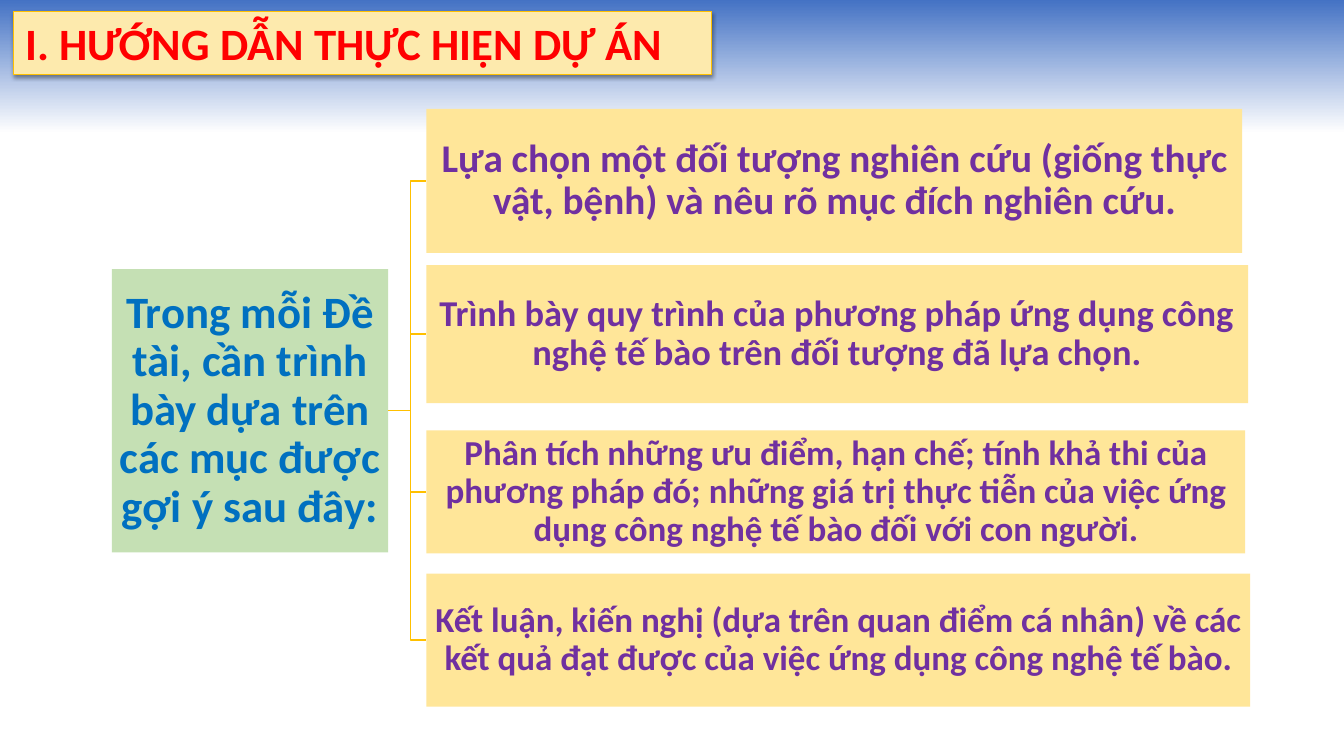
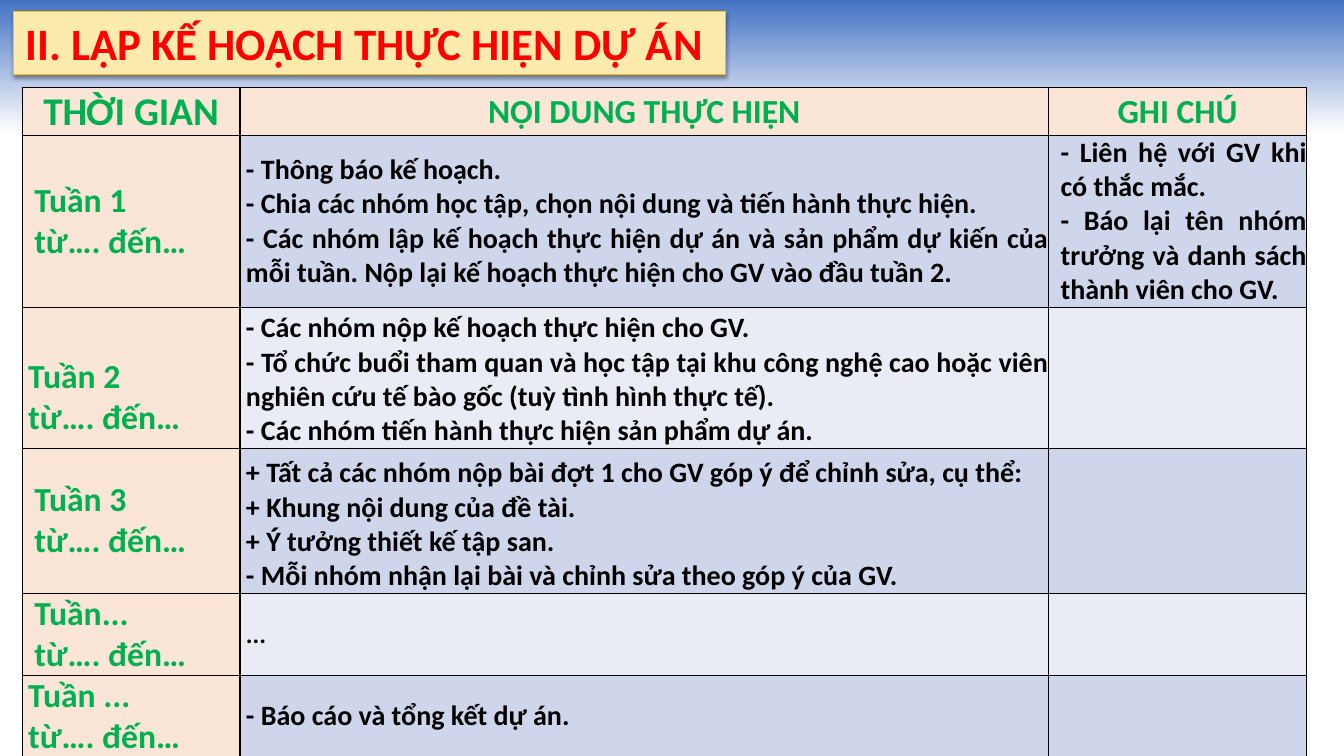
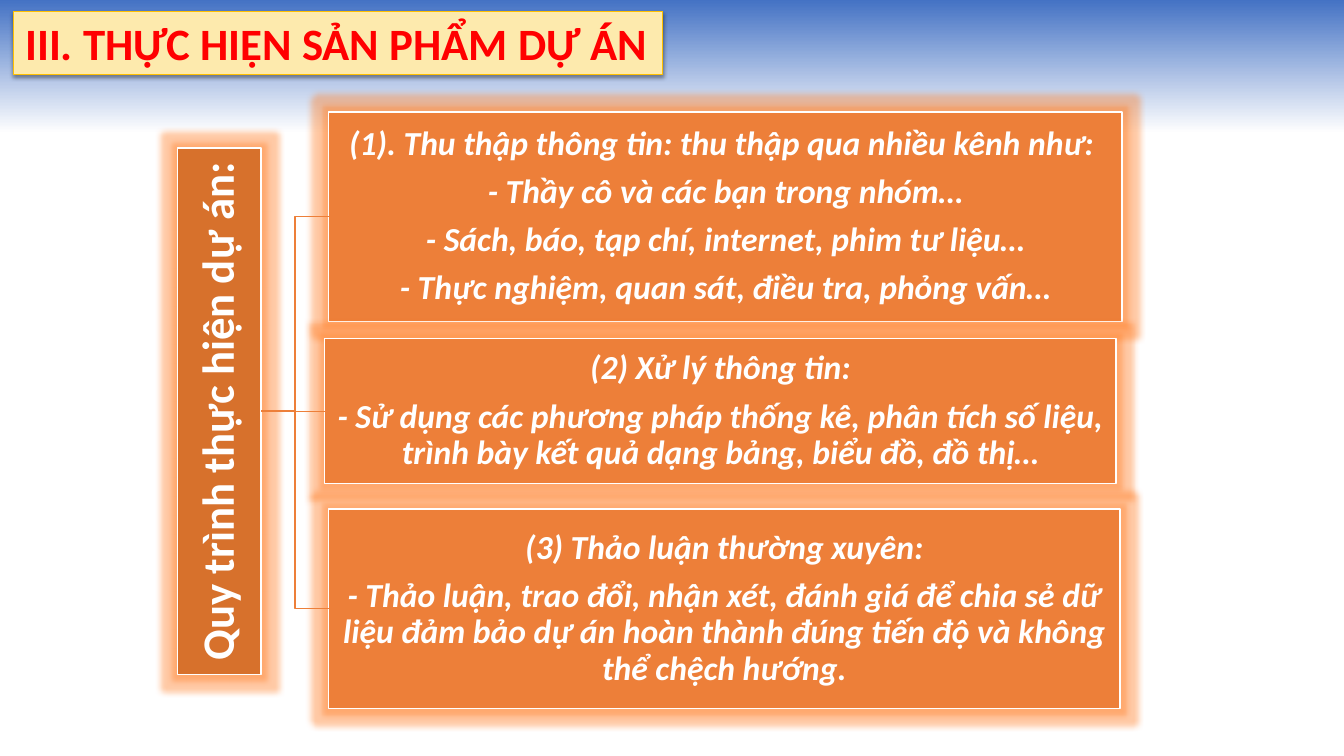
import dataclasses

import lxml.etree
import pptx
import pptx.dml.color
import pptx.enum.dml
import pptx.enum.shapes
import pptx.enum.text
import pptx.oxml.ns
import pptx.util

Inches = pptx.util.Inches
Pt = pptx.util.Pt
RGB = pptx.dml.color.RGBColor.from_string
qn = pptx.oxml.ns.qn
ALIGN = pptx.enum.text.PP_ALIGN
ANCHOR = pptx.enum.text.MSO_ANCHOR
CONNECTOR = pptx.enum.shapes.MSO_CONNECTOR
RECTANGLE = pptx.enum.shapes.MSO_SHAPE.RECTANGLE


@dataclasses.dataclass(frozen=True)
class Theme:
    font: str = "Calibri"
    band: str = "4472C4"
    white: str = "FFFFFF"
    black: str = "000000"
    title_fill: str = "FDEAAD"
    title_text: str = "FF0000"
    gold: str = "FFC000"
    topic_fill: str = "C5E0B4"
    topic_text: str = "0070C0"
    item_fill: str = "FFE699"
    item_text: str = "7030A0"
    label_fill: str = "FBE5D6"
    label_text: str = "00B050"
    stripes: tuple = ("CFD5EA", "E9EBF5")
    process_fill: str = "D7712C"
    step_fill: str = "ED7F39"
    glow: str = "FF7A1F"
    title_size: int = 32
    header_size: int = 28
    label_size: int = 24
    body_size: int = 20
    dots_size: int = 18


def write(frame, text, *, size, color, font=Theme.font, italic=False,
          align=ALIGN.CENTER, spacing=1.0, after=0):
    frame.word_wrap = True
    for index, line in enumerate(text.split("\n")):
        para = frame.add_paragraph() if index else frame.paragraphs[0]
        para.alignment = align
        para.line_spacing = spacing
        para.space_after = Pt(after)
        span = para.add_run()
        span.text = line
        span.font.name = font
        span.font.size = Pt(size)
        span.font.bold = True
        span.font.italic = italic
        span.font.color.rgb = RGB(color)


def add_effect(shape, kind, color, alpha, **attributes):
    effects = lxml.etree.SubElement(shape.element.spPr, qn("a:effectLst"))
    effect = lxml.etree.SubElement(effects, qn("a:" + kind), attributes)
    tint = lxml.etree.SubElement(effect, qn("a:srgbClr"), val=color)
    lxml.etree.SubElement(tint, qn("a:alpha"), val=str(alpha * 1000))


def add_borders(cell, color):
    properties = cell._tc.get_or_add_tcPr()
    for position, side in enumerate(("lnL", "lnR", "lnT", "lnB")):
        line = lxml.etree.Element(qn("a:" + side), w=str(Pt(1)))
        fill = lxml.etree.SubElement(line, qn("a:solidFill"))
        lxml.etree.SubElement(fill, qn("a:srgbClr"), val=color)
        properties.insert(position, line)


class Builder:
    def __init__(self, theme):
        self.theme = theme
        self.deck = pptx.Presentation()
        self.deck.slide_width = Inches(13.33)
        self.deck.slide_height = Inches(7.5)
        self.page = None

    def start(self, title, title_width):
        theme = self.theme
        self.page = self.deck.slides.add_slide(self.deck.slide_layouts[6])
        band = self.rectangle((0, 0, 13.33, 1.32), theme.band)
        band.fill.gradient()
        band.fill.gradient_angle = 270
        for stop, color in zip(band.fill.gradient_stops, (theme.band, theme.white)):
            stop.color.rgb = RGB(color)
        box = self.rectangle((0.13, 0.11, title_width, 0.63), theme.title_fill,
                             line=theme.gold, line_width=0.75)
        box.element.spPr.remove(box.element.spPr.find(qn("a:effectLst")))
        add_effect(box, "outerShdw", theme.black, 38, blurRad=str(Pt(3.1)),
                   dist=str(Pt(1.6)), dir="5400000", rotWithShape="0")
        self.margins(box.text_frame, 0)
        box.text_frame.margin_left = Inches(0.12)
        box.text_frame.vertical_anchor = ANCHOR.TOP
        write(box.text_frame, title, size=theme.title_size, color=theme.title_text,
              align=ALIGN.LEFT, spacing=1.09, after=3)

    def margins(self, holder, inset):
        holder.margin_left = holder.margin_right = Inches(inset)
        holder.margin_top = holder.margin_bottom = Inches(inset)

    def rectangle(self, place, fill, line=None, line_width=1):
        box = self.page.shapes.add_shape(RECTANGLE, *map(Inches, place))
        box.shadow.inherit = False
        box.fill.solid()
        box.fill.fore_color.rgb = RGB(fill)
        if line:
            box.line.color.rgb = RGB(line)
            box.line.width = Pt(line_width)
        else:
            box.line.fill.background()
        return box

    def node(self, place, text, fill, color, size, *, italic=False, line=None,
             glow=None, upward=False):
        box = self.rectangle(place, fill, line)
        if glow:
            box.element.spPr.remove(box.element.spPr.find(qn("a:effectLst")))
            add_effect(box, "glow", glow, 40, rad=str(Pt(8)))
        if upward:
            box.element.find(".//" + qn("a:bodyPr")).set("vert", "vert270")
        self.margins(box.text_frame, 0.02)
        box.text_frame.vertical_anchor = ANCHOR.MIDDLE
        write(box.text_frame, text, size=size, color=color, italic=italic,
              spacing=0.9, after=round(size * 0.35, 1))
        return box

    def branch(self, parent, child, color, bend=50):
        level = abs(parent.top + parent.height / 2
                    - child.top - child.height / 2) < Inches(0.01)
        kind = CONNECTOR.STRAIGHT if level else CONNECTOR.ELBOW
        link = self.page.shapes.add_connector(kind, 0, 0, 0, 0)
        link.begin_connect(parent, 3)
        link.end_connect(child, 1)
        link.line.color.rgb = RGB(color)
        link.line.width = Pt(1)
        lxml.etree.SubElement(link.element.spPr, qn("a:effectLst"))
        if not level:
            guides = link.element.find(".//" + qn("a:avLst"))
            if guides is None:
                guides = lxml.etree.SubElement(
                    link.element.find(".//" + qn("a:prstGeom")), qn("a:avLst"))
            lxml.etree.SubElement(guides, qn("a:gd"), name="adj1",
                                  fmla=f"val {bend * 1000}")

    def table(self, place, columns, heights):
        frame = self.page.shapes.add_table(len(heights), len(columns),
                                           *map(Inches, place))
        grid = frame.table
        grid.horz_banding = False
        for column, width in zip(grid.columns, columns):
            column.width = Inches(width)
        for row, height in zip(grid.rows, heights):
            row.height = Inches(height)
        return grid

    def cell(self, cell, text, fill, *, indent=0, top=0, anchor=ANCHOR.MIDDLE, **style):
        cell.fill.solid()
        cell.fill.fore_color.rgb = RGB(fill)
        add_borders(cell, self.theme.black)
        self.margins(cell, 0)
        cell.margin_left = Inches(indent)
        cell.margin_top = Inches(top)
        cell.vertical_anchor = anchor
        if text:
            write(cell.text_frame, text, **style)


def build_guide(builder):
    theme = builder.theme
    builder.start("I. HƯỚNG DẪN THỰC HIỆN DỰ ÁN", 6.93)
    topic = builder.node(
        (1.11, 2.67, 2.74, 2.81),
        "Trong mỗi Đề tài, cần trình bày dựa trên các mục được gợi ý sau đây:",
        theme.topic_fill, theme.topic_text, 32)
    items = (
        (1.08, 8.09, 1.43, 28, "Lựa chọn một đối tượng nghiên cứu (giống thực vật, bệnh) "
         "và nêu rõ mục đích nghiên cứu."),
        (2.63, 8.15, 1.37, 26, "Trình bày quy trình của phương pháp ứng dụng công nghệ "
         "tế bào trên đối tượng đã lựa chọn."),
        (4.27, 8.12, 1.22, 25, "Phân tích những ưu điểm, hạn chế; tính khả thi của phương "
         "pháp đó; những giá trị thực tiễn của việc ứng dụng công nghệ tế bào đối với "
         "con người."),
        (5.69, 8.17, 1.32, 25, "Kết luận, kiến nghị (dựa trên quan điểm cá nhân) về các "
         "kết quả đạt được của việc ứng dụng công nghệ tế bào."),
    )
    for top, width, height, size, text in items:
        item = builder.node((4.23, top, width, height), text,
                            theme.item_fill, theme.item_text, size)
        builder.branch(topic, item, theme.gold, bend=58)


def build_plan(builder):
    theme = builder.theme
    builder.start("II. LẬP KẾ HOẠCH THỰC HIỆN DỰ ÁN", 7.07)
    heights = (0.35, 1.53, 1.4, 1.44, 0.76, 0.76)
    grid = builder.table((0.22, 0.87, 12.74, sum(heights)), (2.16, 8.02, 2.56), heights)
    headers = (("THỜI GIAN", theme.header_size),
               ("NỘI DUNG THỰC HIỆN", theme.label_size),
               ("GHI CHÚ", theme.label_size))
    for column, (text, size) in enumerate(headers):
        builder.cell(grid.cell(0, column), text, theme.label_fill,
                     size=size, color=theme.label_text)
    weeks = (
        ("Tuần 1 ", 0.12, 0, ANCHOR.MIDDLE, theme.body_size,
         "- Thông báo kế hoạch.\n"
         "- Chia các nhóm học tập, chọn nội dung và tiến hành thực hiện.\n"
         "- Các nhóm lập kế hoạch thực hiện dự án và sản phẩm dự kiến của mỗi tuần. "
         "Nộp lại kế hoạch thực hiện cho GV vào đầu tuần 2.",
         "- Liên hệ với GV khi có thắc mắc.\n"
         "- Báo lại tên nhóm trưởng và danh sách thành viên cho GV."),
        ("Tuần 2 ", 0.06, 0.4, ANCHOR.BOTTOM, theme.body_size,
         "- Các nhóm nộp kế hoạch thực hiện cho GV.\n"
         "- Tổ chức buổi tham quan và học tập tại khu công nghệ cao hoặc viên nghiên cứu "
         "tế bào gốc (tuỳ tình hình thực tế).\n"
         "- Các nhóm tiến hành thực hiện sản phẩm dự án.", ""),
        ("Tuần 3", 0.12, 0, ANCHOR.BOTTOM, theme.body_size,
         "+ Tất cả các nhóm nộp bài đợt 1 cho GV góp ý để chỉnh sửa, cụ thể:\n"
         "+ Khung nội dung của đề tài.\n"
         "+ Ý tưởng thiết kế tập san.\n"
         "- Mỗi nhóm nhận lại bài và chỉnh sửa theo góp ý của GV.", ""),
        ("Tuần... ", 0.12, 0, ANCHOR.MIDDLE, theme.dots_size, "...", ""),
        ("Tuần ... ", 0.06, 0, ANCHOR.MIDDLE, theme.body_size,
         "- Báo cáo và tổng kết dự án.", ""),
    )
    for row, (week, indent, top, anchor, size, content, note) in enumerate(weeks, 1):
        stripe = theme.stripes[(row - 1) % 2]
        builder.cell(grid.cell(row, 0), week + "\ntừ…. đến…", theme.label_fill,
                     indent=indent, top=top, size=theme.label_size,
                     color=theme.label_text, align=ALIGN.JUSTIFY)
        builder.cell(grid.cell(row, 1), content, stripe, indent=0.06, anchor=anchor,
                     size=size, color=theme.black, align=ALIGN.JUSTIFY)
        builder.cell(grid.cell(row, 2), note, stripe, indent=0.12,
                     size=theme.body_size, color=theme.black, align=ALIGN.JUSTIFY)


def build_process(builder):
    theme = builder.theme
    builder.start("III. THỰC HIỆN SẢN PHẨM DỰ ÁN", 6.44)
    process = builder.node((1.76, 1.47, 0.83, 5.22), "Quy trình thực hiện dự án:",
                           theme.process_fill, theme.white, 32, line=theme.white,
                           glow=theme.glow, upward=True)
    steps = (
        ((3.26, 1.11, 7.87, 2.08),
         "(1). Thu thập thông tin: thu thập qua nhiều kênh như: \n"
         "- Thầy cô và các bạn trong nhóm…\n"
         "- Sách, báo, tạp chí, internet, phim tư liệu…\n"
         "- Thực nghiệm, quan sát, điều tra, phỏng vấn…"),
        ((3.22, 3.36, 7.85, 1.44),
         "(2) Xử lý thông tin:\n"
         "- Sử dụng các phương pháp thống kê, phân tích số liệu, trình bày kết quả "
         "dạng bảng, biểu đồ, đồ thị…"),
        ((3.26, 5.05, 7.85, 1.98),
         "(3) Thảo luận thường xuyên:\n"
         "- Thảo luận, trao đổi, nhận xét, đánh giá để chia sẻ dữ liệu đảm bảo dự án "
         "hoàn thành đúng tiến độ và không thể chệch hướng."),
    )
    for place, text in steps:
        step = builder.node(place, text, theme.step_fill, theme.white, 24, italic=True,
                            line=theme.white, glow=theme.glow)
        builder.branch(process, step, theme.step_fill)


def main():
    builder = Builder(Theme())
    build_guide(builder)
    build_plan(builder)
    build_process(builder)
    builder.deck.save("out.pptx")


if __name__ == "__main__":
    main()
